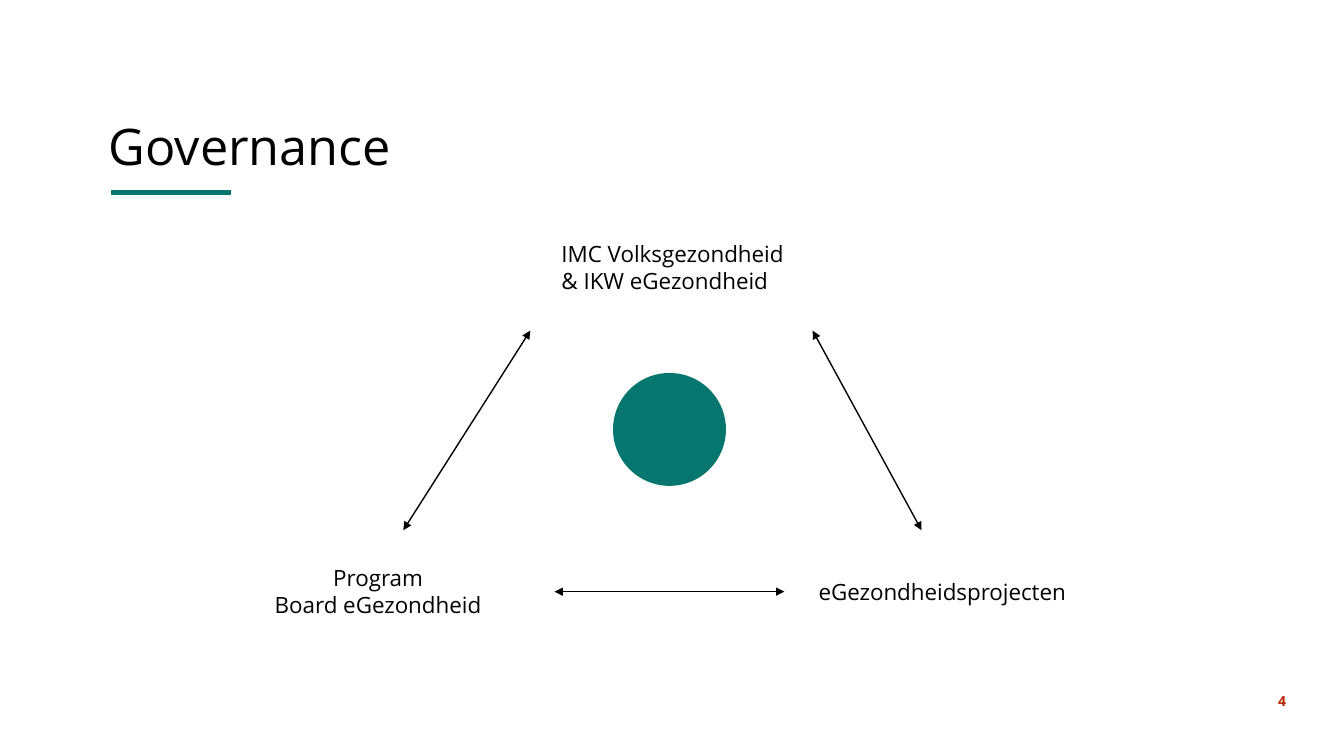
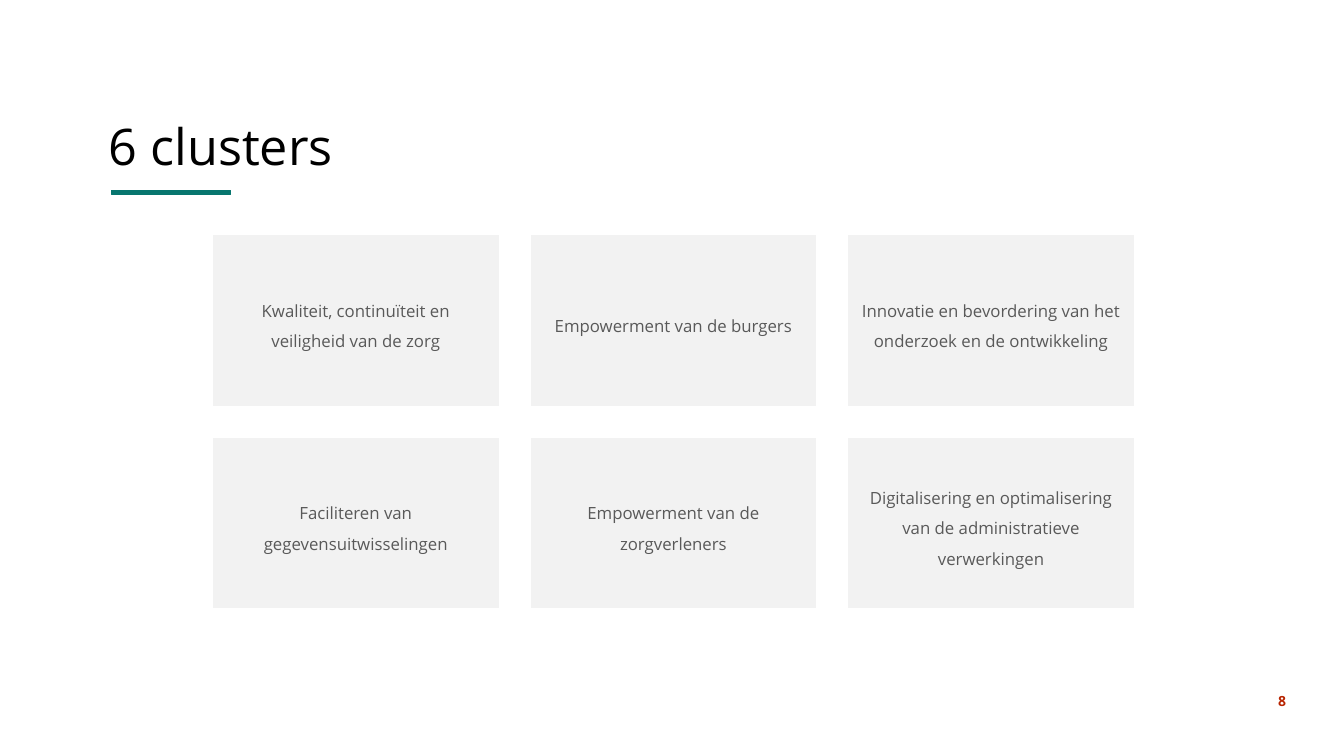
import pptx
import pptx.util
import pptx.dml.color
import pptx.enum.shapes
import pptx.enum.text
import pptx.oxml.ns
import lxml.etree

Inches, Pt = pptx.util.Inches, pptx.util.Pt
SHAPE = pptx.enum.shapes.MSO_SHAPE
ALIGN = pptx.enum.text.PP_ALIGN
ANCHOR = pptx.enum.text.MSO_ANCHOR

FONT = "Open Sans"
COLORS = {
    "teal": "07766F",
    "text": "000000",
    "number": "B82400",
    "card": "F2F2F2",
    "card_text": "595959",
    "white": "FFFFFF",
}


def rgb(name):
    return pptx.dml.color.RGBColor.from_string(COLORS[name])


def write(sp, lines, size, color="text", bold=False, align=ALIGN.LEFT, anchor=ANCHOR.TOP):
    """Fill a shape with one paragraph per line and return its text frame."""
    tf = sp.text_frame
    tf.word_wrap = True
    tf.vertical_anchor = anchor
    for i, line in enumerate(lines):
        p = tf.add_paragraph() if i else tf.paragraphs[0]
        p.text = line
        p.alignment = align
        p.font.name = FONT
        p.font.size = Pt(size)
        p.font.bold = bold
        p.font.color.rgb = rgb(color)
    return tf


def add_text(slide, box, lines, size, **style):
    sp = slide.shapes.add_textbox(*map(Inches, box))
    write(sp, lines, size, **style)


def add_shape(slide, kind, box, fill, line=None, width=0.75):
    sp = slide.shapes.add_shape(kind, *map(Inches, box))
    sp.shadow.inherit = False
    sp.fill.solid()
    sp.fill.fore_color.rgb = rgb(fill)
    if line:
        sp.line.color.rgb = rgb(line)
        sp.line.width = Pt(width)
    else:
        sp.line.fill.background()
    return sp


def add_double_arrow(slide, start, end):
    cn = slide.shapes.add_connector(
        pptx.enum.shapes.MSO_CONNECTOR.STRAIGHT, *map(Inches, start + end))
    cn.line.color.rgb = rgb("text")
    cn.line.width = Pt(1)
    ln = cn.line._get_or_add_ln()
    for tag in ("a:headEnd", "a:tailEnd"):
        lxml.etree.SubElement(ln, pptx.oxml.ns.qn(tag), type="triangle")
    lxml.etree.SubElement(cn._element.spPr, pptx.oxml.ns.qn("a:effectLst"))


def add_base_slide(prs, title, number):
    """Add a blank slide with title, underline and slide number."""
    slide = prs.slides.add_slide(prs.slide_layouts[6])
    add_shape(slide, SHAPE.RECTANGLE, (1.11, 1.89, 1.18, 0.04), "teal", "teal")
    add_text(slide, (12.17, 6.75, 1.09, 0.4), [number], 10, color="number",
             bold=True, align=ALIGN.CENTER, anchor=ANCHOR.MIDDLE)
    add_text(slide, (0.98, 0.52, 11.17, 1.27), [title], 36, anchor=ANCHOR.BOTTOM)
    return slide


def add_triangle(slide, left, top):
    """Draw three parties joined by double arrows around a circle."""
    def at(x, y, *size):
        return (left + x, top + y) + size

    add_text(slide, at(3.21, 0, 2.52, 0.64),
             ["IMC Volksgezondheid", "& IKW eGezondheid"], 16)
    add_text(slide, at(0, 3.22, 2.98, 0.64),
             ["Program", "Board eGezondheid"], 16, align=ALIGN.CENTER)
    add_text(slide, at(5.76, 3.36, 2.76, 0.37), ["eGezondheidsprojecten"], 16)
    for start, end in (
        (at(3, 0.95), at(1.74, 2.93)),
        (at(5.52, 3.54), at(3.24, 3.54)),
        (at(5.8, 0.95), at(6.88, 2.93)),
    ):
        add_double_arrow(slide, start, end)
    add_shape(slide, SHAPE.OVAL, at(3.82, 1.37, 1.12, 1.12), "teal")


def add_card(slide, box, label):
    sp = add_shape(slide, SHAPE.RECTANGLE, box, "card", "white", 2)
    tf = write(sp, [label], 12, color="card_text", align=ALIGN.CENTER, anchor=ANCHOR.MIDDLE)
    tf.margin_left = tf.margin_right = tf.margin_top = tf.margin_bottom = Inches(0.14)
    p = tf.paragraphs[0]
    p.line_spacing = 1.5
    p.space_after = Pt(4.2)


def add_card_grid(slide, left, top, labels, columns=3):
    width, height, gap = 2.86, 1.72, 0.29
    for i, label in enumerate(labels):
        row, col = divmod(i, columns)
        box = (left + col * (width + gap), top + row * (height + gap), width, height)
        add_card(slide, box, label)


def main():
    prs = pptx.Presentation()
    prs.slide_width, prs.slide_height = Inches(13.33), Inches(7.5)

    governance = add_base_slide(prs, "Governance", "4")
    add_triangle(governance, 2.26, 2.33)

    clusters = add_base_slide(prs, "6 clusters", "8")
    add_card_grid(clusters, 2.1, 2.32, [
        "Kwaliteit, continuïteit en veiligheid van de zorg",
        "Empowerment van de burgers",
        "Innovatie en bevordering van het onderzoek en de ontwikkeling",
        "Faciliteren van gegevensuitwisselingen",
        "Empowerment van de zorgverleners",
        "Digitalisering en optimalisering van de administratieve verwerkingen",
    ])

    prs.save("out.pptx")


if __name__ == "__main__":
    main()
